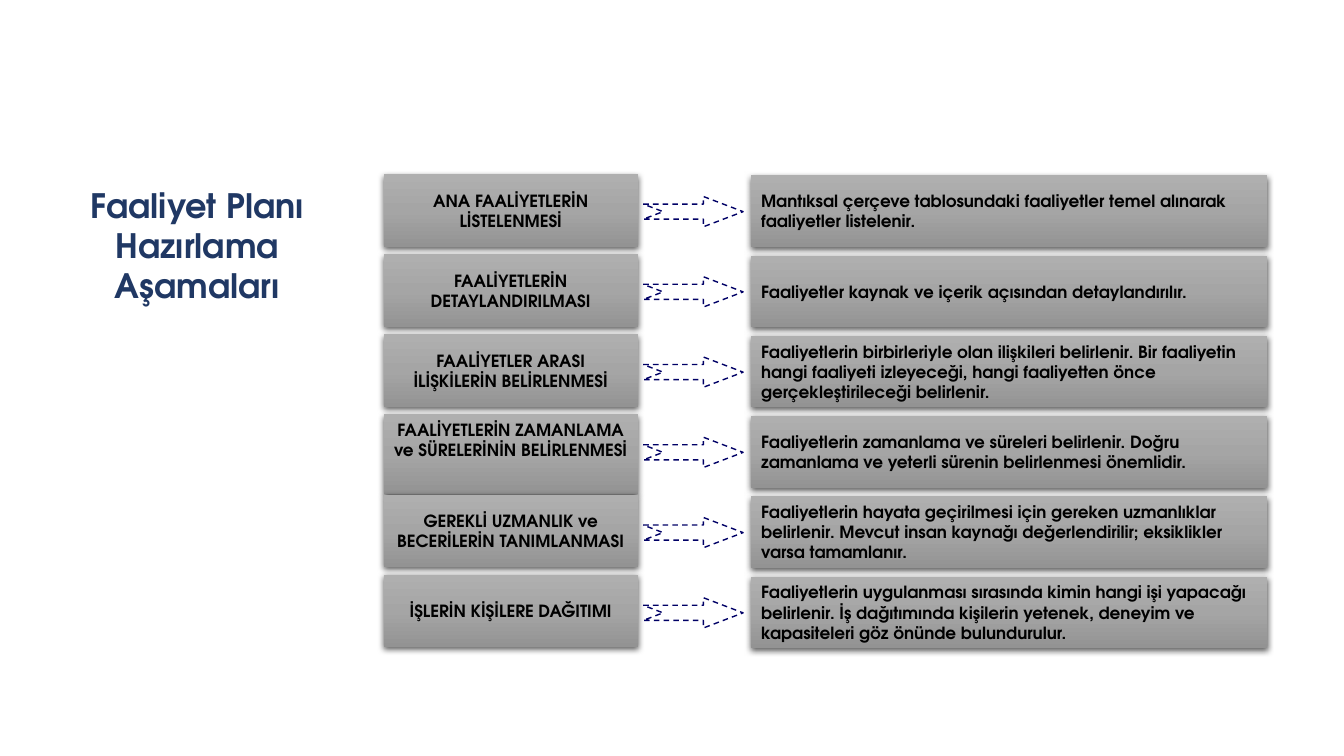
from copy import deepcopy

from lxml.etree import SubElement
from pptx import Presentation
from pptx.dml.color import RGBColor
from pptx.enum.dml import MSO_LINE
from pptx.enum.shapes import MSO_SHAPE
from pptx.enum.text import MSO_ANCHOR, MSO_AUTO_SIZE, PP_ALIGN
from pptx.oxml.ns import qn
from pptx.util import Inches, Pt

SLIDE_WIDTH, SLIDE_HEIGHT = Inches(13.33), Inches(7.5)
FONT = "TeX Gyre Adventor"
COLORS = {
    "title": "203864",
    "text": "000000",
    "arrow": "000066",
    "shadow": "000000",
    "panel_top": "AFAFAF",
    "panel_middle": "A5A5A5",
    "panel_bottom": "939393",
}
TITLE_BOX = (5.93, 23.73, 17.48, 17.47)
STAGE_COLUMN = {"left": 28.54, "width": 18.93, "height": 9.6, "first": 23.07, "last": 76}
ARROW_COLUMN = {"left": 47.86, "width": 7.43, "height": 4, "first": 26, "last": 79.07}
DETAIL_COLUMN = {"left": 55.89, "width": 38.41, "height": 9.47, "first": 23.2, "last": 76.27}
TALL_STAGE, TALL_HEIGHT = 3, 10.53
STEPS = [
    ("ANA FAALİYETLERİN LİSTELENMESİ",
     "Mantıksal çerçeve tablosundaki faaliyetler temel alınarak faaliyetler listelenir."),
    ("FAALİYETLERİN DETAYLANDIRILMASI",
     "Faaliyetler kaynak ve içerik açısından detaylandırılır."),
    ("FAALİYETLER ARASI İLİŞKİLERİN BELİRLENMESİ",
     "Faaliyetlerin birbirleriyle olan ilişkileri belirlenir. Bir faaliyetin hangi faaliyeti "
     "izleyeceği, hangi faaliyetten önce gerçekleştirileceği belirlenir."),
    ("FAALİYETLERİN ZAMANLAMA ve SÜRELERİNİN BELİRLENMESİ",
     "Faaliyetlerin zamanlama ve süreleri belirlenir. Doğru zamanlama ve yeterli sürenin "
     "belirlenmesi önemlidir."),
    ("GEREKLİ UZMANLIK ve BECERİLERİN TANIMLANMASI",
     "Faaliyetlerin hayata geçirilmesi için gereken uzmanlıklar belirlenir. Mevcut insan "
     "kaynağı değerlendirilir; eksiklikler varsa tamamlanır."),
    ("İŞLERİN KİŞİLERE DAĞITIMI",
     "Faaliyetlerin uygulanması sırasında kimin hangi işi yapacağı belirlenir. İş dağıtımında "
     "kişilerin yetenek, deneyim ve kapasiteleri göz önünde bulundurulur."),
]


def color(name):
    """Return a named colour."""
    return RGBColor.from_string(COLORS[name])


def to_lengths(box):
    """Turn percentages of the slide into left, top, width and height."""
    sides = (SLIDE_WIDTH, SLIDE_HEIGHT) * 2
    return [round(side * share / 100) for side, share in zip(sides, box)]


def row_box(column, index):
    """Return the box of one evenly spaced row in a column."""
    pitch = (column["last"] - column["first"]) / (len(STEPS) - 1)
    return column["left"], column["first"] + index * pitch, column["width"], column["height"]


def write_text(shape, text, size, ink, alignment, anchor):
    """Write one bold paragraph into a shape."""
    frame = shape.text_frame
    frame.word_wrap = True
    frame.auto_size = MSO_AUTO_SIZE.NONE
    frame.vertical_anchor = anchor
    para = frame.paragraphs[0]
    para.alignment = alignment
    para.line_spacing = 1.0
    span = para.add_run()
    span.text = text
    span.font.name = FONT
    span.font.size = Pt(size)
    span.font.bold = True
    span.font.color.rgb = color(ink)


def fill_panel(panel):
    """Give a panel its three-stop vertical gradient."""
    panel.fill.gradient()
    panel.fill.gradient_angle = 270
    stop_list = panel._element.spPr.find(qn("a:gradFill")).find(qn("a:gsLst"))
    stop_list.insert(1, deepcopy(stop_list[0]))
    names = ("panel_top", "panel_middle", "panel_bottom")
    for stop, position, name in zip(panel.fill.gradient_stops, (0, 0.5, 1), names):
        stop.position = position
        stop.color.rgb = color(name)


def add_drop_shadow(panel):
    """Give a panel a soft shadow below it."""
    panel.shadow.inherit = False
    effects = panel._element.spPr.find(qn("a:effectLst"))
    shadow = SubElement(effects, qn("a:outerShdw"), blurRad=str(Pt(4.5)), dist=str(Pt(1.5)),
                        dir="5400000", algn="ctr", rotWithShape="0")
    tint = SubElement(shadow, qn("a:srgbClr"), val=COLORS["shadow"])
    SubElement(tint, qn("a:alpha"), val="63000")


def add_panel(page, box, text, alignment, anchor=MSO_ANCHOR.MIDDLE):
    """Place a grey panel with text in the given box."""
    panel = page.shapes.add_shape(MSO_SHAPE.RECTANGLE, *to_lengths(box))
    fill_panel(panel)
    panel.line.fill.background()
    add_drop_shadow(panel)
    write_text(panel, text, 12, "text", alignment, anchor)


def add_arrow(page, box):
    """Place a dashed notched arrow in the given box."""
    arrow = page.shapes.add_shape(MSO_SHAPE.NOTCHED_RIGHT_ARROW, *to_lengths(box))
    arrow.adjustments[0] = 0.5
    arrow.adjustments[1] = 1.31
    arrow.fill.background()
    arrow.line.color.rgb = color("arrow")
    arrow.line.width = Pt(1)
    arrow.line.dash_style = MSO_LINE.DASH
    arrow.shadow.inherit = False


def add_title(page, box):
    """Place the slide title in the given box."""
    title = page.shapes.title
    title.left, title.top, title.width, title.height = to_lengths(box)
    write_text(title, "Faaliyet Planı Hazırlama Aşamaları", 24, "title",
               PP_ALIGN.CENTER, MSO_ANCHOR.TOP)


def add_steps(page):
    """Place each stage, its arrow and its explanation on one row."""
    for index, (stage, detail) in enumerate(STEPS):
        stage_box = row_box(STAGE_COLUMN, index)
        anchor = MSO_ANCHOR.MIDDLE
        if index == TALL_STAGE:
            stage_box = (*stage_box[:3], TALL_HEIGHT)
            anchor = MSO_ANCHOR.TOP
        add_panel(page, stage_box, stage, PP_ALIGN.CENTER, anchor)
        add_arrow(page, row_box(ARROW_COLUMN, index))
        add_panel(page, row_box(DETAIL_COLUMN, index), detail, PP_ALIGN.LEFT)


def main():
    """Build and save the deck."""
    deck = Presentation()
    deck.slide_width, deck.slide_height = SLIDE_WIDTH, SLIDE_HEIGHT
    page = deck.slides.add_slide(deck.slide_layouts.get_by_name("Title Only"))
    add_title(page, TITLE_BOX)
    add_steps(page)
    deck.save("out.pptx")


if __name__ == "__main__":
    main()
